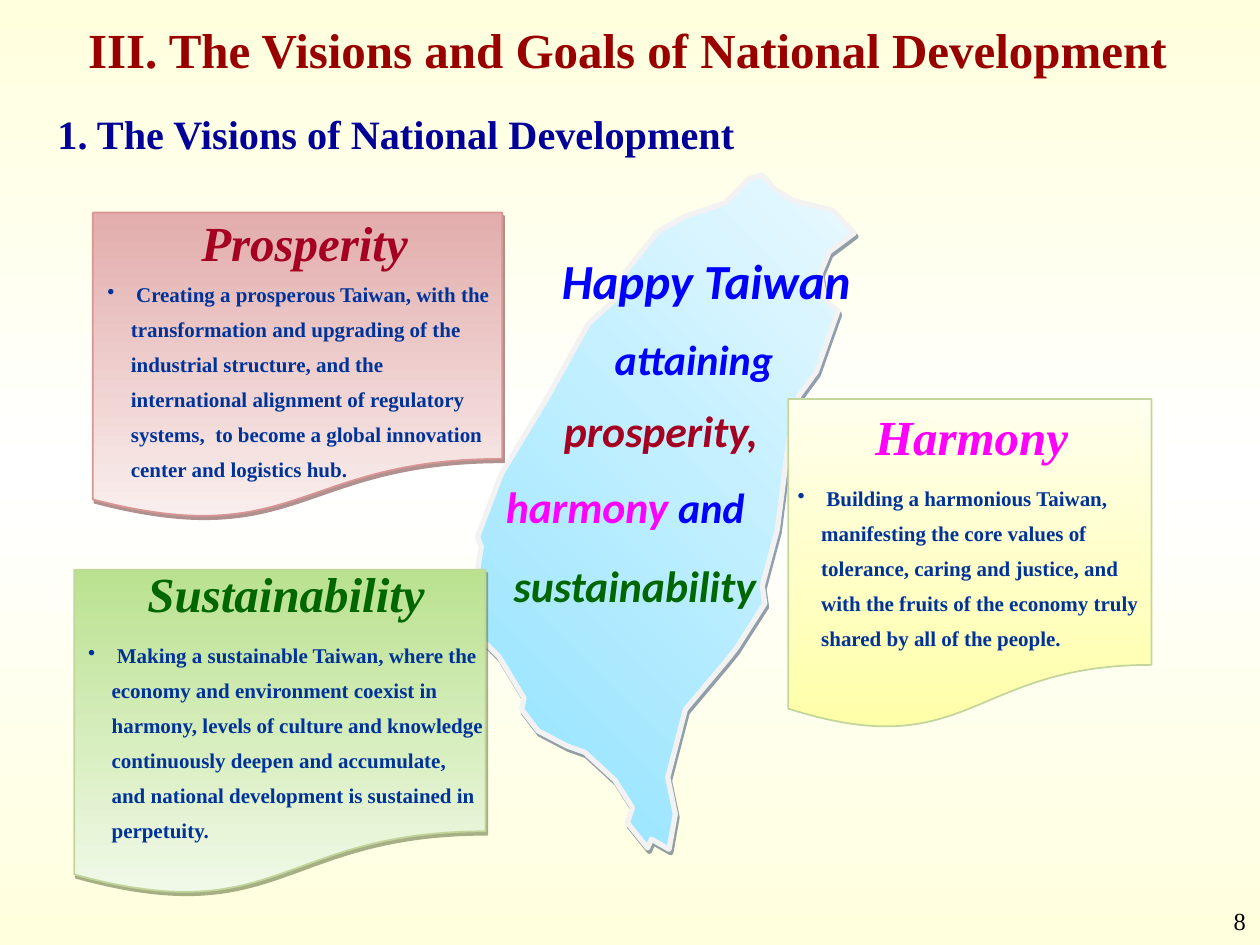
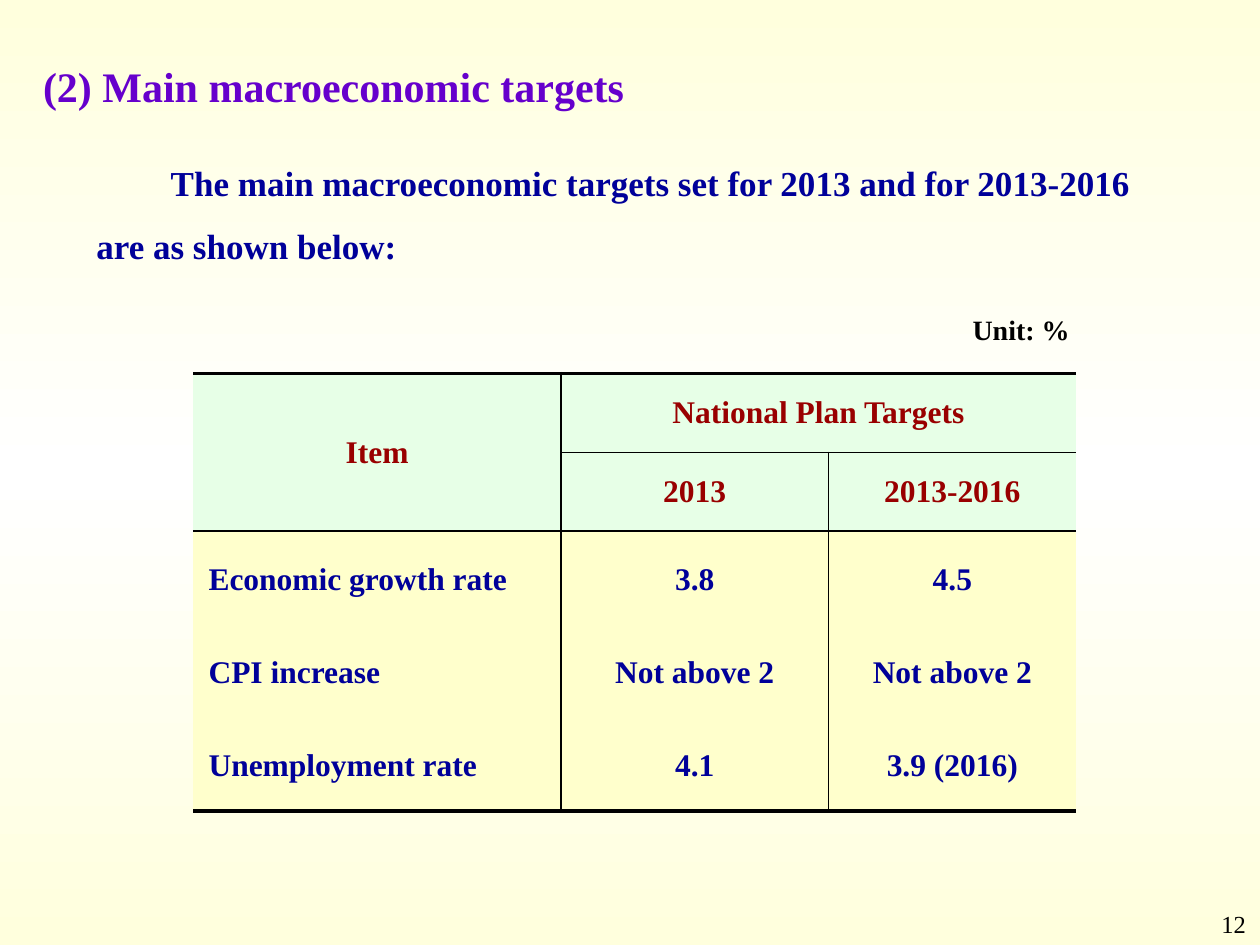
"""Build two slides on national development: the visions and the macroeconomic targets."""
from copy import deepcopy
from lxml import etree
from pptx import Presentation
from pptx import util as u
from pptx.dml import color
from pptx.enum import shapes, text
from pptx.oxml import ns

Pt = u.Pt
hue = color.RGBColor.from_string
SERIF, SANS = "Times New Roman", "Calibri"
NAVY, MAROON, BLUE, CRIMSON = "000099", "990000", "0000FF", "A50021"
GREEN, PINK, BLACK = "006600", "FF00FF", "000000"
LEFT, CENTER, RIGHT = text.PP_ALIGN.LEFT, text.PP_ALIGN.CENTER, text.PP_ALIGN.RIGHT
TOP, MIDDLE, BOTTOM = text.MSO_ANCHOR.TOP, text.MSO_ANCHOR.MIDDLE, text.MSO_ANCHOR.BOTTOM
HANGING = 13.5


def style(para, spans, align=LEFT, font=SERIF, bold=True, italic=False,
          spacing=None, before=0, margin=0, indent=0):
    para.alignment = align
    para.line_spacing = spacing
    para.space_before = Pt(before)
    properties = para._p.get_or_add_pPr()
    properties.set("marL", str(Pt(margin)))
    properties.set("indent", str(Pt(indent)))
    for words, size, shade in spans:
        span = para.add_run()
        span.text = words
        span.font.name = font
        span.font.size = Pt(size)
        span.font.bold = bold
        span.font.italic = italic
        span.font.color.rgb = hue(shade)


def add_box(page, area, anchor=TOP, inset=(7.2, 3.6)):
    frame = page.shapes.add_textbox(*map(Pt, area)).text_frame
    frame.word_wrap = True
    frame.vertical_anchor = anchor
    frame.margin_left = frame.margin_right = Pt(inset[0])
    frame.margin_top = frame.margin_bottom = Pt(inset[1])
    return frame


deck = Presentation()
deck.slide_width, deck.slide_height = Pt(720), Pt(540)
visions, targets = [deck.slides.add_slide(deck.slide_layouts[6]) for _ in range(2)]
gradients = [(page.background.fill, page.element, 270, ("FFFFDD", "FFFFFF", "FFFFDD"))
             for page in (visions, targets)]
shadows = []

coast = [
    (629, 159), (615, 150), (605, 139), (594, 142), (576, 161), (543, 172), (522, 184),
    (497, 215), (489, 237), (467, 257), (433, 318), (398, 376), (379, 426), (382, 434),
    (374, 485), (378, 503), (396, 521), (416, 554), (414, 563), (427, 580), (450, 592),
    (464, 597), (488, 619), (502, 641), (498, 653), (514, 673), (517, 666), (531, 674),
    (536, 646), (530, 617), (544, 563), (576, 525), (584, 515), (607, 479), (605, 465),
    (617, 420), (626, 349), (634, 314), (648, 295), (665, 247), (655, 238), (651, 217),
    (658, 200), (678, 185), (661, 167),
]
builder = visions.shapes.build_freeform(*coast[0], scale=Pt(0.72))
builder.add_line_segments(coast[1:], close=True)
island = builder.convert_to_shape()
island.line.color.rgb = hue("F2F2F2")
island.line.width = Pt(3)
gradients.append((island.fill, island.element, 45, ("8FE2FF", "E9F9FF")))
shadows.append((island, "243F60"))

style(add_box(visions, (-1.5, 4.5, 720, 44.5)).paragraphs[0],
      [("III. The Visions and Goals of National Development", 28, MAROON)],
      CENTER, spacing=1.1)
style(add_box(visions, (20, 62, 632, 32.5)).paragraphs[0],
      [(" 1. The Visions of National Development", 23, NAVY)],
      spacing=0.9, margin=HANGING, indent=-HANGING)

cards = [
    ("Prosperity", CRIMSON, Pt(33.6), 0,
     " Creating a prosperous Taiwan, with the transformation and upgrading of the "
     "industrial structure, and the international alignment of regulatory systems,  "
     "to become a global innovation center and logistics hub.",
     (53, 121.5, 234, 175.5), (57, 116.5, 234, 164), ("E2ADAC", "F9EFEE"),
     "D99594", "622423"),
    ("Sustainability", GREEN, Pt(15), 6,
     " Making a sustainable Taiwan, where the economy and environment coexist in "
     "harmony, levels of culture and knowledge continuously deepen and accumulate, "
     "and national development is sustained in perpetuity.",
     (42.5, 325.5, 235, 186.5), (46, 302.5, 235, 217.5), ("BAE18F", "F1F9E9"),
     "C2D69B", "4E6128"),
    ("Harmony", PINK, None, 6,
     " Building a harmonious Taiwan, manifesting the core values of tolerance, caring "
     "and justice, and with the fruits of the economy truly shared by all of the people.",
     (450.5, 228, 207.5, 189.5), (451.5, 207.5, 207.5, 189.5), ("FFFFED", "FFFFA7"),
     "C2D69B", None),
]
for name, name_colour, name_spacing, gap, vision, area, text_area, tints, edge, shadow in cards:
    card = visions.shapes.add_shape(shapes.MSO_SHAPE.FLOWCHART_DOCUMENT, *map(Pt, area))
    card.line.color.rgb = hue(edge)
    card.line.width = Pt(1)
    gradients.append((card.fill, card.element, 270, tints))
    shadows.append((card, shadow))
    frame = add_box(visions, text_area, MIDDLE, (4.3, 2.2))
    style(frame.paragraphs[0], [(name, 28, name_colour)], CENTER, italic=True,
          spacing=name_spacing)
    para = frame.add_paragraph()
    style(para, [(vision, 12, "003399")], spacing=Pt(20), before=gap,
          margin=HANGING, indent=-HANGING)
    etree.SubElement(para._p.pPr, ns.qn("a:buChar"), char="•")

slogan = [
    ((314, 139.5, 224, 41), LEFT, [("Happy Taiwan", 28, BLUE)]),
    ((302.5, 187, 188, 36), CENTER, [("attaining", 24, BLUE)]),
    ((286.5, 227, 188, 37.5), CENTER, [("prosperity, ", 25, CRIMSON)]),
    ((282, 270.5, 163.5, 39), LEFT, [("harmony ", 25, PINK), ("and", 24, BLUE)]),
    ((286.5, 316, 163.5, 39), LEFT, [("sustainability", 25, GREEN)]),
]
for area, align, spans in slogan:
    style(add_box(visions, area).paragraphs[0], spans, align, SANS, italic=True)

for fill, owner, angle, tints in gradients:
    fill.gradient()
    fill.gradient_angle = angle
    stop_list = owner.xpath(".//a:gsLst")[0]
    while len(stop_list) < len(tints):
        stop_list.append(deepcopy(stop_list[0]))
    for place, (stop, tint) in enumerate(zip(fill.gradient_stops, tints)):
        stop.position = place / (len(tints) - 1)
        stop.color.rgb = hue(tint)

for shape, tint in shadows:
    shape.shadow.inherit = False
    if tint:
        effects = shape.element.spPr.find(ns.qn("a:effectLst"))
        cast = etree.SubElement(effects, ns.qn("a:outerShdw"), blurRad="0",
                                dist=str(Pt(2.2)), dir=str(63 * 60000), algn="ctr",
                                rotWithShape="0")
        tone = etree.SubElement(cast, ns.qn("a:srgbClr"), val=tint)
        etree.SubElement(tone, ns.qn("a:alpha"), val="50000")

style(add_box(targets, (17.5, 34.5, 533, 33), MIDDLE).paragraphs[0],
      [("(2) Main macroeconomic targets", 24, "6600CC")],
      spacing=0.9, margin=HANGING, indent=-HANGING)
style(add_box(targets, (48, 77, 617, 80)).paragraphs[0],
      [("The main macroeconomic targets set for 2013 and for 2013-2016 "
        "are as shown below:", 20, NAVY)], spacing=1.5, before=4, indent=42.5)
style(add_box(targets, (545.5, 175, 76, 26.5)).paragraphs[0],
      [("Unit: %", 16, BLACK)], CENTER)

rows = [
    ("Item", "National Plan Targets", ""),
    ("", "2013", "2013-2016"),
    ("Economic growth rate", "3.8", "4.5"),
    ("CPI increase", "Not above 2", "Not above 2"),
    ("Unemployment rate", "4.1", "3.9 (2016)"),
]
last = len(rows) - 1
table = targets.shapes.add_table(len(rows), 3, Pt(110.5), Pt(213.5), Pt(504.5), Pt(250)).table
table.first_row = table.horz_banding = False
for column, width in zip(table.columns, (210, 153, 141.5)):
    column.width = Pt(width)
table.cell(0, 0).merge(table.cell(1, 0))
table.cell(0, 1).merge(table.cell(0, 2))

for r, labels in enumerate(rows):
    header = r < 2
    table.rows[r].height = Pt(45 if header else 53.3)
    for c, label in enumerate(labels):
        item = c == 0 and not header
        cell = table.cell(r, c)
        cell.vertical_anchor = MIDDLE
        cell.margin_left = cell.margin_right = Pt(1.5)
        cell.margin_top = cell.margin_bottom = Pt(0)
        if label:
            style(cell.text_frame.paragraphs[0],
                  [(label, 18, MAROON if header else NAVY)],
                  LEFT if item else CENTER,
                  spacing=None if header else 1.1, indent=7.2 if item else 0)
        borders = {
            "a:lnL": 1 if c > 0 and (r, c) != (0, 2) else 0,
            "a:lnR": 1 if c < 2 and (r, c) != (0, 1) else 0,
            "a:lnT": 2.25 if r == 0 else 1 if r == 2 or (r == 1 and c) else 0,
            "a:lnB": 2.25 if r == last else 1 if header else 0,
        }
        for side, weight in borders.items():
            line = etree.SubElement(cell._tc.get_or_add_tcPr(), ns.qn(side),
                                    w=str(Pt(weight)))
            if weight:
                paint = etree.SubElement(line, ns.qn("a:solidFill"))
                etree.SubElement(paint, ns.qn("a:srgbClr"), val=BLACK)
            else:
                etree.SubElement(line, ns.qn("a:noFill"))
        cell.fill.solid()
        cell.fill.fore_color.rgb = hue("E7FFE7" if header else "FFFFCC")

for page, number, top, height, anchor in ((visions, "8", 514, 26, TOP),
                                          (targets, "12", 502.5, 37.5, BOTTOM)):
    style(add_box(page, (551, top, 168, height), anchor).paragraphs[0],
          [(number, 14, BLACK)], RIGHT, bold=False)

deck.save("out.pptx")
